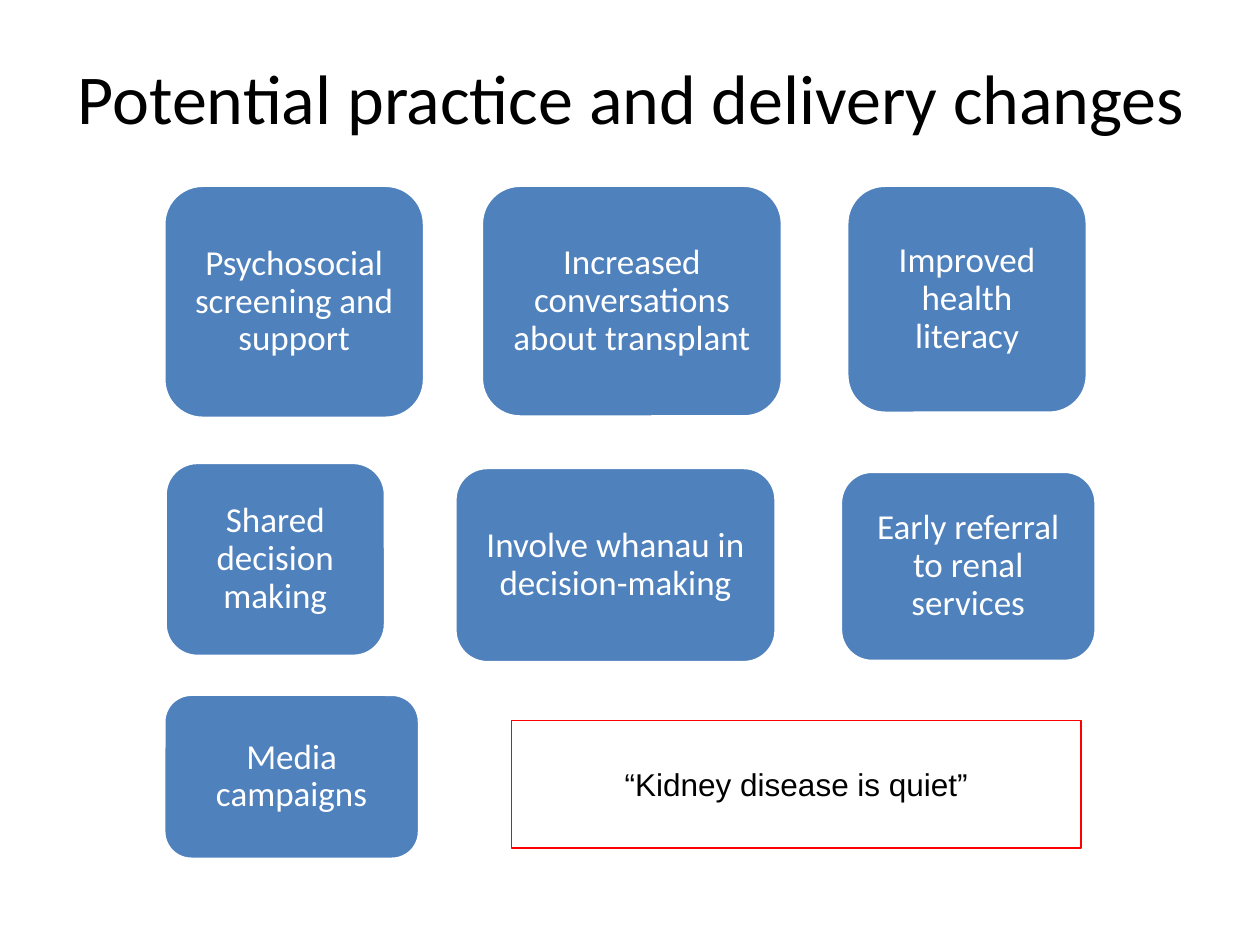
import pptx
import pptx.util
import pptx.dml.color
import pptx.enum.shapes
import pptx.enum.text

COLORS = {"card": "4F81BD", "white": "FFFFFF", "black": "000000", "quote": "FF0000"}
COLUMNS, ROWS = 100, 75

CARDS = [
    ("Psychosocial screening and support", 13, 14.7, 20.7, 18.5),
    ("Increased conversations about transplant", 38.2, 14.7, 23.9, 18.4),
    ("Improved health literacy", 67.2, 14.7, 19.1, 18.1),
    ("Shared decision making", 13.1, 36.7, 17.5, 15.4),
    ("Involve whanau in decision-making", 36.1, 37.1, 25.5, 15.5),
    ("Early referral to renal services", 66.7, 37.4, 20.3, 15.1),
    ("Media campaigns", 13, 55.1, 20.3, 13.1),
]


def rgb(name):
    return pptx.dml.color.RGBColor.from_string(COLORS[name])


class SlideBuilder:
    def __init__(self, prs):
        self.column = prs.slide_width / COLUMNS
        self.row = prs.slide_height / ROWS
        self.slide = prs.slides.add_slide(prs.slide_layouts[5])

    def box(self, col, row, cols, rows):
        return (int(col * self.column), int(row * self.row),
                int(cols * self.column), int(rows * self.row))

    def set_text(self, sp, text, font, size, color, spacing=1.0):
        tf = sp.text_frame
        tf.text = text
        tf.word_wrap = True
        tf.vertical_anchor = pptx.enum.text.MSO_ANCHOR.MIDDLE
        p = tf.paragraphs[0]
        p.alignment = pptx.enum.text.PP_ALIGN.CENTER
        p.line_spacing = spacing
        r = p.runs[0]
        r.font.name = font
        r.font.size = pptx.util.Pt(size)
        r.font.color.rgb = rgb(color)

    def title(self, text, *place):
        sp = self.slide.shapes.title
        sp.left, sp.top, sp.width, sp.height = self.box(*place)
        self.set_text(sp, text, "Calibri", 40, "black")

    def shape(self, kind, place, line, width):
        sp = self.slide.shapes.add_shape(kind, *self.box(*place))
        sp.shadow.inherit = False
        sp.line.color.rgb = rgb(line)
        sp.line.width = pptx.util.Pt(width)
        return sp

    def card(self, text, *place):
        sp = self.shape(pptx.enum.shapes.MSO_SHAPE.ROUNDED_RECTANGLE, place, "white", 2)
        sp.fill.solid()
        sp.fill.fore_color.rgb = rgb("card")
        tf = sp.text_frame
        tf.margin_left = tf.margin_right = pptx.util.Inches(0.08)
        tf.margin_top = tf.margin_bottom = pptx.util.Inches(0.08)
        self.set_text(sp, text, "Calibri", 20, "white", 0.9)

    def quote(self, text, *place):
        sp = self.shape(pptx.enum.shapes.MSO_SHAPE.RECTANGLE, place, "quote", 0.75)
        sp.fill.background()
        self.set_text(sp, text, "Arial", 18, "black")


def main():
    prs = pptx.Presentation()
    prs.slide_width = pptx.util.Inches(10)
    prs.slide_height = pptx.util.Inches(7.5)
    builder = SlideBuilder(prs)
    builder.title("Potential practice and delivery changes", 5.1, 1.4, 90, 12.5)
    for card in CARDS:
        builder.card(*card)
    builder.quote("“Kidney disease is quiet”", 40.6, 57.2, 45.2, 10.1)
    prs.save("out.pptx")


if __name__ == "__main__":
    main()
